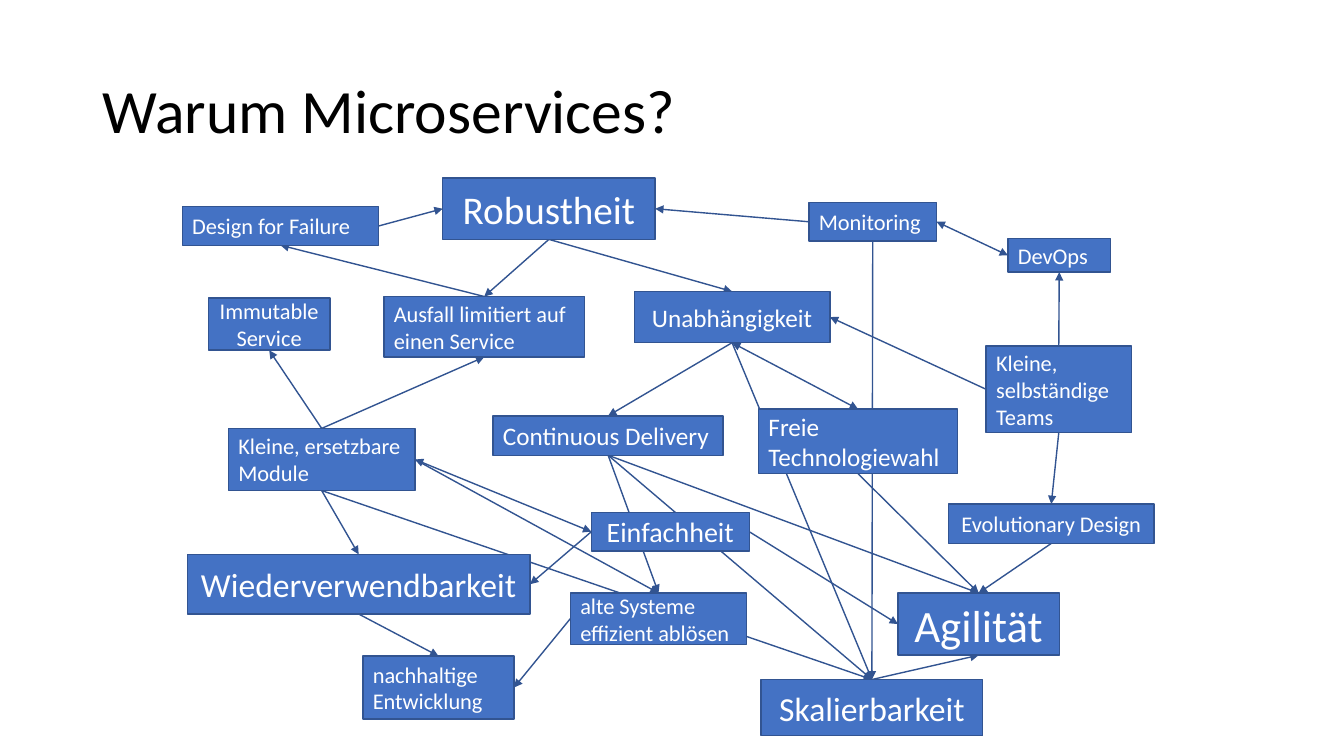
from pptx import Presentation
from pptx.dml.color import RGBColor
from pptx.enum.shapes import MSO_CONNECTOR as Connector, MSO_SHAPE as Preset
from pptx.enum.text import MSO_ANCHOR as Anchor, PP_ALIGN as Align
from pptx.oxml.ns import qn
from pptx.util import Inches, Pt
from lxml.etree import SubElement

COLUMNS, ROWS = 160, 90
TOP, LEFT, BOTTOM, RIGHT = range(4)
TITLE_ONLY = 5

BOXES = [
    ("Skalierbarkeit", 90.6, 80.9, 26.4, 6.7, 24, Align.CENTER),
    ("Continuous Delivery", 58.7, 49.5, 27.4, 4.7, 18, Align.LEFT),
    ("nachhaltige Entwicklung", 43.2, 78.1, 18, 7.5, 16, Align.LEFT),
    ("alte Systeme effizient ablösen", 67.9, 70.6, 21, 6.1, 16, Align.LEFT),
    ("Unabhängigkeit", 75.5, 34.7, 23.3, 6.1, 18, Align.CENTER),
    ("Freie Technologiewahl", 90.3, 48.7, 23.7, 7.7, 18, Align.LEFT),
    ("Kleine, selbständige Teams", 117.4, 41.2, 17.3, 10.3, 16, Align.LEFT),
    ("Robustheit", 52.7, 21.2, 25.3, 7.3, 28, Align.CENTER),
    ("Kleine, ersetzbare Module", 27.2, 51, 22.2, 7.4, 16, Align.LEFT),
    ("Ausfall limitiert auf einen Service", 45.7, 35.3, 23.9, 7.2, 16, Align.LEFT),
    ("Agilität", 106.9, 70.6, 19.2, 7.4, 32, Align.CENTER),
    ("Wiederverwendbarkeit", 22.3, 66, 40.8, 7.1, 24, Align.CENTER),
    ("Design for Failure", 21.7, 24.6, 23.4, 4.6, 16, Align.LEFT),
    ("Monitoring", 96.3, 24.1, 15.2, 4.6, 16, Align.LEFT),
    ("Immutable Service", 24.8, 35.5, 14.5, 6.2, 16, Align.CENTER),
    ("Evolutionary Design", 112.9, 60, 24.5, 4.7, 16, Align.CENTER),
    ("DevOps", 120, 28.4, 12.2, 4, 16, Align.LEFT),
    ("Einfachheit", 70.4, 61, 18.8, 4.6, 20, Align.CENTER),
]

ARROWS = [
    ("Unabhängigkeit", BOTTOM, "Skalierbarkeit", TOP),
    ("Monitoring", BOTTOM, "Skalierbarkeit", TOP),
    ("Kleine, ersetzbare Module", BOTTOM, "Skalierbarkeit", TOP),
    ("Continuous Delivery", BOTTOM, "Agilität", TOP),
    ("Continuous Delivery", BOTTOM, "Skalierbarkeit", TOP),
    ("alte Systeme effizient ablösen", LEFT, "nachhaltige Entwicklung", RIGHT),
    ("Continuous Delivery", BOTTOM, "alte Systeme effizient ablösen", TOP),
    ("Kleine, selbständige Teams", LEFT, "Unabhängigkeit", RIGHT),
    ("Kleine, ersetzbare Module", TOP, "Ausfall limitiert auf einen Service", BOTTOM),
    ("Kleine, ersetzbare Module", RIGHT, "alte Systeme effizient ablösen", TOP),
    ("Unabhängigkeit", BOTTOM, "Continuous Delivery", TOP),
    ("Robustheit", BOTTOM, "Unabhängigkeit", TOP),
    ("Robustheit", BOTTOM, "Ausfall limitiert auf einen Service", TOP),
    ("Kleine, selbständige Teams", BOTTOM, "Evolutionary Design", TOP),
    ("Freie Technologiewahl", BOTTOM, "Agilität", TOP),
    ("Wiederverwendbarkeit", BOTTOM, "nachhaltige Entwicklung", TOP),
    ("Kleine, ersetzbare Module", BOTTOM, "Wiederverwendbarkeit", TOP),
    ("Design for Failure", RIGHT, "Robustheit", LEFT),
    ("Monitoring", LEFT, "Robustheit", RIGHT),
    ("Evolutionary Design", BOTTOM, "Agilität", TOP),
    ("Kleine, ersetzbare Module", TOP, "Immutable Service", BOTTOM),
    ("Kleine, selbständige Teams", TOP, "DevOps", BOTTOM),
    ("Skalierbarkeit", TOP, "Agilität", BOTTOM),
    ("Ausfall limitiert auf einen Service", TOP, "Design for Failure", BOTTOM),
    ("Einfachheit", RIGHT, "Agilität", LEFT),
    ("Einfachheit", LEFT, "Wiederverwendbarkeit", RIGHT),
]

DOUBLE_ARROWS = [
    ("Freie Technologiewahl", TOP, "Unabhängigkeit", BOTTOM),
    ("Monitoring", RIGHT, "DevOps", LEFT),
    ("Einfachheit", LEFT, "Kleine, ersetzbare Module", RIGHT),
]


def color(value):
    """Turn a hex string into a colour."""
    return RGBColor.from_string(value)


def write(shape, text, *, size, ink, font, align=Align.LEFT, spacing=1.0):
    """Put formatted text into a shape, centred vertically."""
    frame = shape.text_frame
    frame.word_wrap = True
    frame.vertical_anchor = Anchor.MIDDLE
    paragraph = frame.paragraphs[0]
    paragraph.alignment = align
    paragraph.line_spacing = spacing
    run = paragraph.add_run()
    run.text = text
    run.font.size = Pt(size)
    run.font.name = font
    run.font.color.rgb = color(ink)


class Diagram:
    """Style and current slide of a diagram of linked boxes."""

    font, fill, edge, light, dark = "Calibri", "4472C4", "325491", "FFFFFF", "000000"

    def __init__(self, presentation):
        """Add a title-only slide and measure its grid."""
        self.slide = presentation.slides.add_slide(presentation.slide_layouts[TITLE_ONLY])
        self.column = presentation.slide_width / COLUMNS
        self.row = presentation.slide_height / ROWS
        self.boxes = {}

    def area(self, left, top, width, height):
        """Convert grid columns and rows to slide lengths."""
        return (round(left * self.column), round(top * self.row),
                round(width * self.column), round(height * self.row))

    def outline(self, shape):
        """Give a box or connector the common line."""
        shape.line.color.rgb = color(self.edge)
        shape.line.width = Pt(1)

    def title(self, text, *place):
        """Place and fill the title."""
        title = self.slide.shapes.title
        title.left, title.top, title.width, title.height = self.area(*place)
        write(title, text, size=44, ink=self.dark, font=self.font, spacing=0.9)

    def box(self, text, left, top, width, height, size, align):
        """Add a labelled box."""
        shape = self.slide.shapes.add_shape(Preset.RECTANGLE, *self.area(left, top, width, height))
        shape.shadow.inherit = False
        shape.fill.solid()
        shape.fill.fore_color.rgb = color(self.fill)
        self.outline(shape)
        write(shape, text, size=size, ink=self.light, font=self.font, align=align)
        self.boxes[text] = shape

    def arrow(self, source, source_side, target, target_side, ends=("tailEnd",)):
        """Connect two boxes with an arrow."""
        connector = self.slide.shapes.add_connector(Connector.STRAIGHT, 0, 0, 0, 0)
        connector.begin_connect(self.boxes[source], source_side)
        connector.end_connect(self.boxes[target], target_side)
        self.outline(connector)
        line = connector.line._get_or_add_ln()
        for end in ends:
            SubElement(line, qn(f"a:{end}"), type="triangle")
        SubElement(line.getparent(), qn("a:effectLst"))

    def raise_boxes(self):
        """Bring the boxes in front of the arrows."""
        for shape in self.boxes.values():
            element = shape._element
            element.getparent().append(element)


def main():
    """Build and save the slide."""
    presentation = Presentation()
    presentation.slide_width, presentation.slide_height = Inches(13.33), Inches(7.5)
    diagram = Diagram(presentation)
    diagram.title("Warum Microservices?", 11, 4.8, 138, 17.4)
    for box in BOXES:
        diagram.box(*box)
    for arrow in ARROWS:
        diagram.arrow(*arrow)
    for arrow in DOUBLE_ARROWS:
        diagram.arrow(*arrow, ends=("headEnd", "tailEnd"))
    diagram.raise_boxes()
    presentation.save("out.pptx")


if __name__ == "__main__":
    main()
